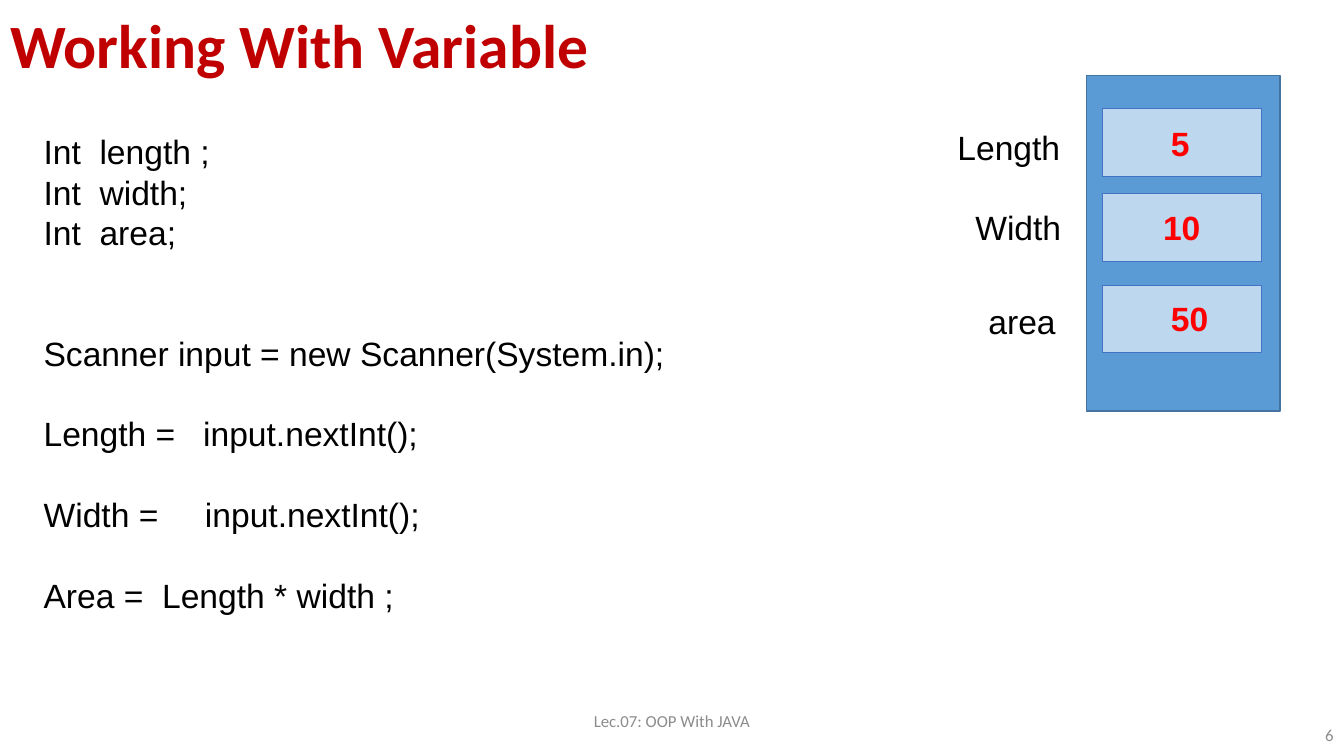
from dataclasses import dataclass

from pptx import Presentation
from pptx import util as u
from pptx.dml.color import RGBColor
from pptx.enum import shapes, text


@dataclass(frozen=True)
class Theme:
    heading_font: str = "Calibri"
    body_font: str = "Arial"
    title: str = "C00000"
    body: str = "000000"
    value: str = "FF0000"
    muted: str = "8C8C8C"
    memory: str = "5B9BD5"
    memory_line: str = "43739E"
    slot: str = "BDD7EE"
    slot_line: str = "4472C4"
    title_size: float = 44
    body_size: float = 24
    footer_size: float = 12
    line_pitch: float = 28.8


THEME = Theme()

DECLARATIONS = ["Int  length ;", "Int  width;", "Int  area;"]
STATEMENTS = [
    "Scanner input = new Scanner(System.in);",
    "Length =   input.nextInt();",
    "Width =     input.nextInt();",
    "Area =  Length * width ;",
]
# fmt: off
VARIABLES = [
    ("Length", (-3.5, 1.17, 3.61), "5", (1.88, 1.07, 0.99), 0.84),
    ("Width", (-3.05, 3.18, 3.23), "10", (1.68, 3.18, 1.47), 2.98),
    ("area", (-2.72, 5.57, 2.67), "50", (1.88, 5.49, 1.47), 5.29),
]


def place(box):
    return [u.Cm(length) for length in box]


def add_run(p, words, font, size, color, bold=False):
    r = p.add_run()
    r.text = words
    r.font.name = font
    r.font.size = u.Pt(size)
    r.font.bold = bold
    r.font.color.rgb = RGBColor.from_string(color)


def add_text_frame(slide, box, wrap=True):
    tf = slide.shapes.add_textbox(*place(box)).text_frame
    tf.word_wrap = wrap
    return tf


def add_body_line(p, words, color=THEME.body, bold=False):
    p.line_spacing = u.Pt(THEME.line_pitch)
    add_run(p, words, THEME.body_font, THEME.body_size, color, bold)


def add_rectangle(slide, box, fill, line, weight):
    sp = slide.shapes.add_shape(shapes.MSO_SHAPE.RECTANGLE, *place(box))
    sp.shadow.inherit = False
    sp.fill.solid()
    sp.fill.fore_color.rgb = RGBColor.from_string(fill)
    sp.line.color.rgb = RGBColor.from_string(line)
    sp.line.width = u.Pt(weight)


def add_title(slide, box):
    sp = slide.shapes.title
    sp.left, sp.top, sp.width, sp.height = place(box)
    tf = sp.text_frame
    tf.word_wrap = True
    tf.auto_size = text.MSO_AUTO_SIZE.NONE
    tf.vertical_anchor = text.MSO_ANCHOR.MIDDLE
    p = tf.paragraphs[0]
    p.alignment = text.PP_ALIGN.LEFT
    p.line_spacing = 0.9
    add_run(p, "Working With Variable", THEME.heading_font,
            THEME.title_size, THEME.title, True)


def add_code(slide, box):
    tf = add_text_frame(slide, box)
    for i, line in enumerate(DECLARATIONS + STATEMENTS):
        p = tf.add_paragraph() if i else tf.paragraphs[0]
        if i >= len(DECLARATIONS):
            gap_lines = 2 if i == len(DECLARATIONS) else 1
            p.space_before = u.Pt(gap_lines * THEME.line_pitch)
        add_body_line(p, line)


def add_memory(slide, box):
    left, top, width, height = box
    line_height = 1.27
    add_rectangle(slide, box, THEME.memory, THEME.memory_line, 1)
    for name, name_at, value, value_at, slot_top in VARIABLES:
        slot = (left + 0.41, top + slot_top, width - 0.87, 1.7)
        add_rectangle(slide, slot, THEME.slot, THEME.slot_line, 0.5)
        for words, (dx, dy, w), color, is_value in (
            (name, name_at, THEME.body, False),
            (value, value_at, THEME.value, True),
        ):
            tf = add_text_frame(
                slide, (left + dx, top + dy, w, line_height), not is_value)
            add_body_line(tf.paragraphs[0], words, color, is_value)


def add_footer(slide, box, words, alignment):
    tf = add_text_frame(slide, box)
    tf.vertical_anchor = text.MSO_ANCHOR.MIDDLE
    p = tf.paragraphs[0]
    p.alignment = alignment
    add_run(p, words, THEME.heading_font, THEME.footer_size, THEME.muted)


def main():
    prs = Presentation()
    prs.slide_width, prs.slide_height = u.Cm(33.87), u.Cm(19.05)
    slide = prs.slides.add_slide(prs.slide_layouts[5])
    add_title(slide, (0, 0, 17.78, 2.46))
    add_code(slide, (0.85, 3.18, 21.9, 12.57))
    add_memory(slide, (27.38, 1.9, 4.88, 8.46))
    add_footer(slide, (11.22, 17.66, 11.43, 1.01),
               "Lec.07: OOP With JAVA", text.PP_ALIGN.CENTER)
    add_footer(slide, (25.96, 18.01, 7.9, 1.01), "6", text.PP_ALIGN.RIGHT)
    prs.save("out.pptx")


if __name__ == "__main__":
    main()
